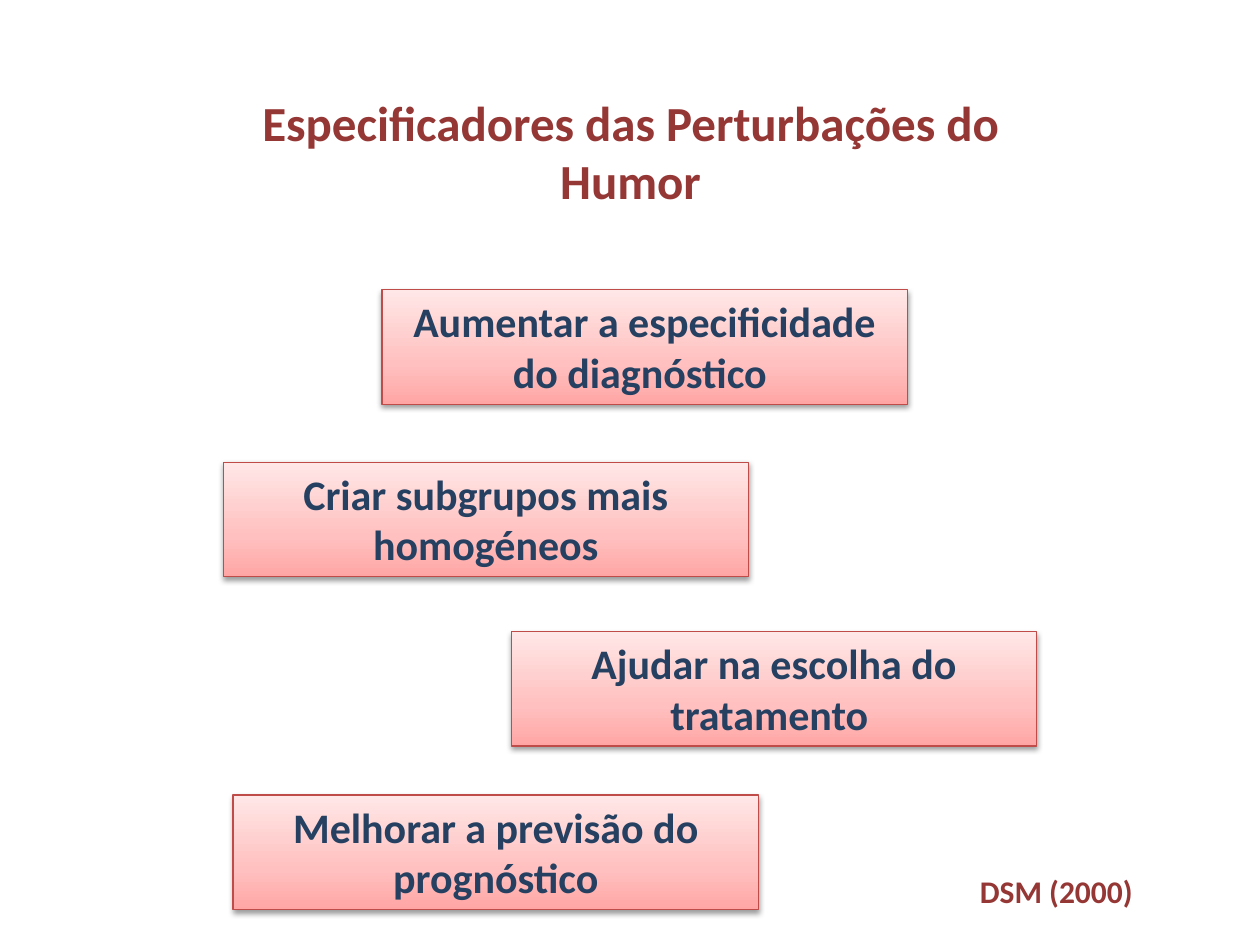
"""Build a slide on the purposes of mood disorder specifiers."""
from lxml import etree
from pptx import Presentation
from pptx.dml.color import RGBColor
from pptx.enum.shapes import MSO_SHAPE
from pptx.enum.text import MSO_ANCHOR, MSO_AUTO_SIZE, PP_ALIGN
from pptx.oxml.ns import qn
from pptx.util import Cm, Pt

RECT = MSO_SHAPE.RECTANGLE
TOP = MSO_ANCHOR.TOP
FIT_SHAPE = MSO_AUTO_SIZE.SHAPE_TO_FIT_TEXT
CENTER = PP_ALIGN.CENTER

FONT = "Calibri"
DARK_RED = RGBColor(0x95, 0x37, 0x35)
NAVY = RGBColor(0x25, 0x40, 0x61)
BORDER = RGBColor(0xBF, 0x4C, 0x48)
BLACK = RGBColor(0x00, 0x00, 0x00)
GRADIENT = [
    (0, RGBColor(0xFF, 0xA6, 0xA5)),
    (35, RGBColor(0xFF, 0xC0, 0xBF)),
    (100, RGBColor(0xFF, 0xE7, 0xE7)),
]

BOX_WIDTH, BOX_HEIGHT = Cm(10.59), Cm(2.31)
PURPOSES = [
    (7.7, 5.84, "Aumentar a especificidade do diagnóstico "),
    (4.5, 9.32, "Criar subgrupos mais homogéneos"),
    (10.31, 12.73, "Ajudar na escolha do tratamento "),
    (4.7, 16.03, "Melhorar a previsão do prognóstico"),
]


def write_text(shape, text, size, color):
    """Put one bold centred paragraph in a shape."""
    tf = shape.text_frame
    tf.word_wrap = True
    tf.auto_size = FIT_SHAPE
    tf.vertical_anchor = TOP
    p = tf.paragraphs[0]
    p.alignment = CENTER
    r = p.add_run()
    r.text = text
    r.font.name = FONT
    r.font.size = Pt(size)
    r.font.bold = True
    r.font.color.rgb = color


def add_color(parent, color):
    """Append an RGB colour element and return it."""
    return etree.SubElement(parent, qn("a:srgbClr"), val=str(color))


def fill_gradient(sp):
    """Fill a shape with the vertical pink gradient."""
    sp.fill.gradient()
    sp.fill.gradient_angle = 90
    stops = sp.element.spPr.find(".//" + qn("a:gsLst"))
    for stop in list(stops):
        stops.remove(stop)
    for percent, color in GRADIENT:
        stop = etree.SubElement(stops, qn("a:gs"), pos=str(percent * 1000))
        add_color(stop, color)


def add_shadow(sp):
    """Give a shape a soft shadow below it."""
    sp.shadow.inherit = False
    effects = sp.element.spPr.find(qn("a:effectLst"))
    shadow = etree.SubElement(
        effects, qn("a:outerShdw"), blurRad=str(Pt(3.1)), dist=str(Pt(1.6)),
        dir="5400000", rotWithShape="0")
    etree.SubElement(add_color(shadow, BLACK), qn("a:alpha"), val="38000")


def set_title(s, text):
    """Place and format the title."""
    title = s.shapes.title
    title.left, title.top = Cm(3.91), Cm(1.73)
    title.width, title.height = Cm(17.6), Cm(2.64)
    write_text(title, text, 28, DARK_RED)


def add_purpose(s, left, top, text):
    """Add one purpose box."""
    sp = s.shapes.add_shape(RECT, Cm(left), Cm(top), BOX_WIDTH, BOX_HEIGHT)
    fill_gradient(sp)
    sp.line.color.rgb = BORDER
    sp.line.width = Pt(0.75)
    add_shadow(sp)
    write_text(sp, text, 24, NAVY)


def add_citation(s, text):
    """Add the reference at the bottom right."""
    sp = s.shapes.add_textbox(Cm(19.3), Cm(17.45), Cm(3.99), Cm(1.02))
    write_text(sp, text, 18, DARK_RED)


def main():
    """Create and save the presentation."""
    prs = Presentation()
    prs.slide_width, prs.slide_height = Cm(25.4), Cm(19.05)
    s = prs.slides.add_slide(prs.slide_layouts[5])
    set_title(s, "Especificadores das Perturbações do Humor")
    for left, top, text in PURPOSES:
        add_purpose(s, left, top, text)
    add_citation(s, "DSM (2000)")
    prs.save("out.pptx")


if __name__ == "__main__":
    main()
